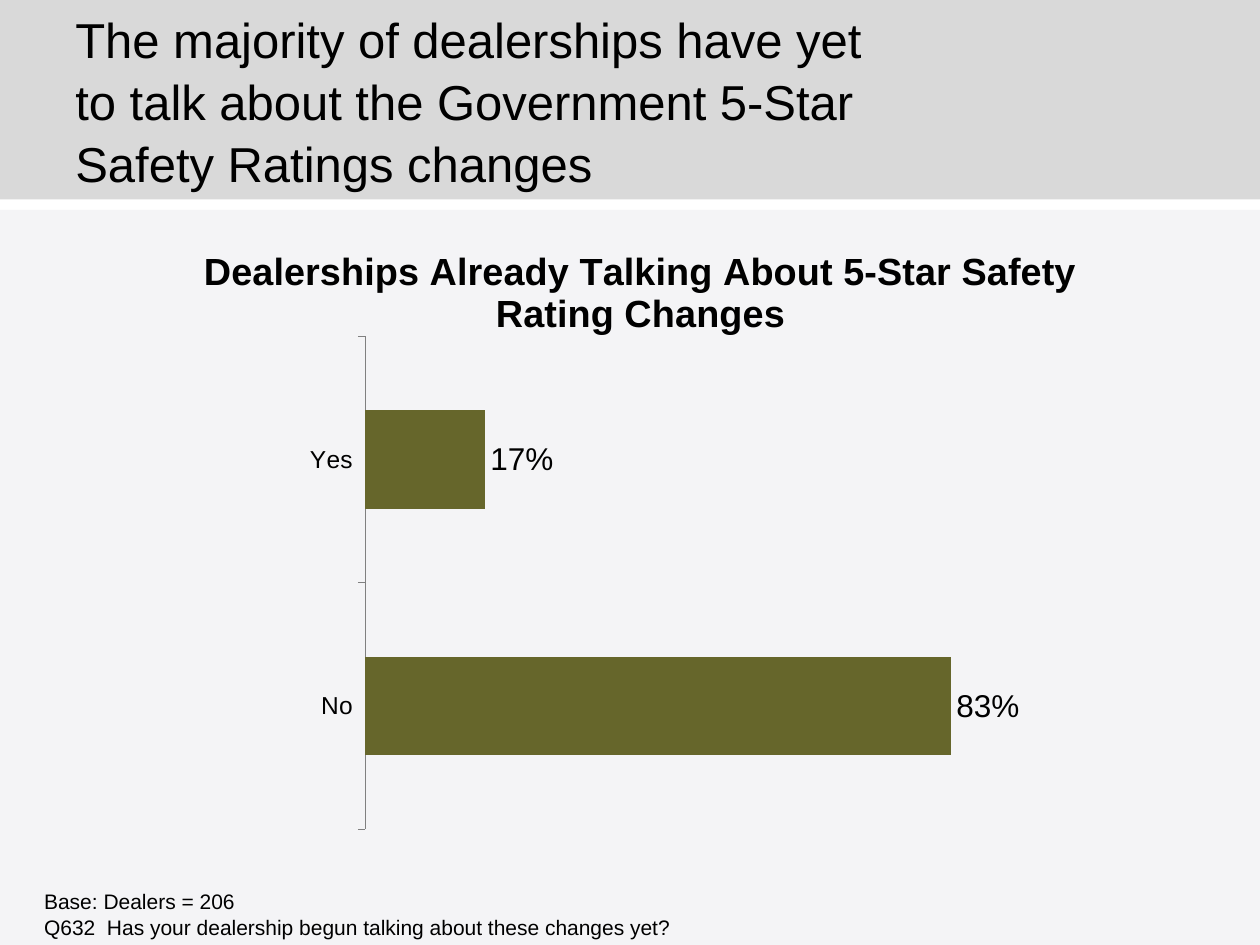
from pptx import Presentation
from pptx.chart.data import CategoryChartData
from pptx.dml.color import RGBColor
from pptx.enum.chart import XL_CHART_TYPE, XL_LABEL_POSITION, XL_TICK_MARK
from pptx.enum.shapes import MSO_SHAPE
from pptx.enum.text import MSO_ANCHOR
from pptx.oxml import parse_xml
from pptx.oxml.ns import nsdecls
from pptx.util import Cm, Pt

COLORS = {
    "band": "D9D9D9",
    "body": "F4F4F6",
    "text": "000000",
    "axis": "808080",
    "bar": "66662B",
}


class Deck:
    """Holds the style and the current slide."""

    def __init__(self, slide, face="Arial"):
        self.slide = slide
        self.face = face

    def color(self, name):
        return RGBColor.from_string(COLORS[name])

    def style(self, font, size, bold=False):
        font.name = self.face
        font.size = Pt(size)
        font.bold = bold
        font.color.rgb = self.color("text")

    def panel(self, x, y, w, h, fill):
        box = self.slide.shapes.add_shape(
            MSO_SHAPE.RECTANGLE, Cm(x), Cm(y), Cm(w), Cm(h))
        box.shadow.inherit = False
        box.fill.solid()
        box.fill.fore_color.rgb = self.color(fill)
        box.line.fill.background()

    def text(self, x, y, w, h, words, size):
        box = self.slide.shapes.add_textbox(Cm(x), Cm(y), Cm(w), Cm(h))
        frame = box.text_frame
        frame.word_wrap = True
        frame.vertical_anchor = MSO_ANCHOR.MIDDLE
        frame.text = words
        for para in frame.paragraphs:
            para.line_spacing = 1.05
            for run in para.runs:
                self.style(run.font, size)

    def chart(self, x, y, w, h, title, data, plot_box):
        chart = self.slide.shapes.add_chart(
            XL_CHART_TYPE.BAR_CLUSTERED,
            Cm(x), Cm(y), Cm(w), Cm(h), data).chart
        self.style(chart.font, 18)
        chart.has_legend = False

        # Chart title
        chart.has_title = True
        frame = chart.chart_title.text_frame
        frame.text = title
        self.style(frame.paragraphs[0].runs[0].font, 21.6, bold=True)
        chart.chart_title.include_in_layout = False

        # Axes
        axis = chart.category_axis
        axis.major_tick_mark = XL_TICK_MARK.OUTSIDE
        axis.format.line.color.rgb = self.color("axis")
        axis.format.line.width = Pt(0.75)
        self.style(axis.tick_labels.font, 14)
        scale = chart.value_axis
        scale.minimum_scale, scale.maximum_scale = 0, 1
        scale.has_major_gridlines = False
        scale.visible = False

        # Bars and labels
        plot = chart.plots[0]
        plot.gap_width = 150
        plot.vary_by_categories = False
        bars = plot.series[0].format.fill
        bars.solid()
        bars.fore_color.rgb = self.color("bar")
        plot.has_data_labels = True
        labels = plot.data_labels
        labels.show_value = True
        labels.number_format = "0%"
        labels.number_format_is_linked = False
        labels.position = XL_LABEL_POSITION.OUTSIDE_END
        self.style(labels.font, 18)
        self.place(chart, plot_box)

    def place(self, chart, plot_box):
        """Fix the inner plot area, in shares of the chart size."""
        modes = "".join(f'<c:{key}Mode val="edge"/>' for key in "xy")
        sizes = "".join(f'<c:{key} val="{share}"/>'
                        for key, share in zip("xywh", plot_box))
        area = chart.plots[0]._element.getparent()
        for old in area.findall("{*}layout"):
            area.remove(old)
        area.insert(0, parse_xml(
            f'<c:layout {nsdecls("c")}><c:manualLayout>'
            f'<c:layoutTarget val="inner"/>{modes}{sizes}'
            '</c:manualLayout></c:layout>'))


def main():
    show = Presentation()
    show.slide_width, show.slide_height = Cm(25.4), Cm(19.05)
    deck = Deck(show.slides.add_slide(show.slide_layouts[6]))

    # Background bands
    deck.panel(0, 0, 25.4, 4.02, "band")
    deck.panel(0, 4.23, 25.4, 14.82, "body")

    # Headline
    deck.text(1.27, 0.42, 16.93, 3.18,
              "The majority of dealerships have yet to talk about "
              "the Government 5-Star Safety Ratings changes", 28)

    # Survey answers
    data = CategoryChartData(number_format="0%")
    data.categories = ["No", "Yes"]
    data.add_series("Series 1", [0.83, 0.17])
    deck.chart(0.85, 4.45, 24.13, 12.28,
               "Dealerships Already Talking About 5-Star Safety "
               "Rating Changes", data, (0.27, 0.19, 0.59, 0.81))

    # Base and question
    deck.text(0.64, 17.78, 23.92, 1.27,
              "Base: Dealers = 206\n"
              "Q632  Has your dealership begun talking about "
              "these changes yet?", 12)

    show.save("out.pptx")


if __name__ == "__main__":
    main()
